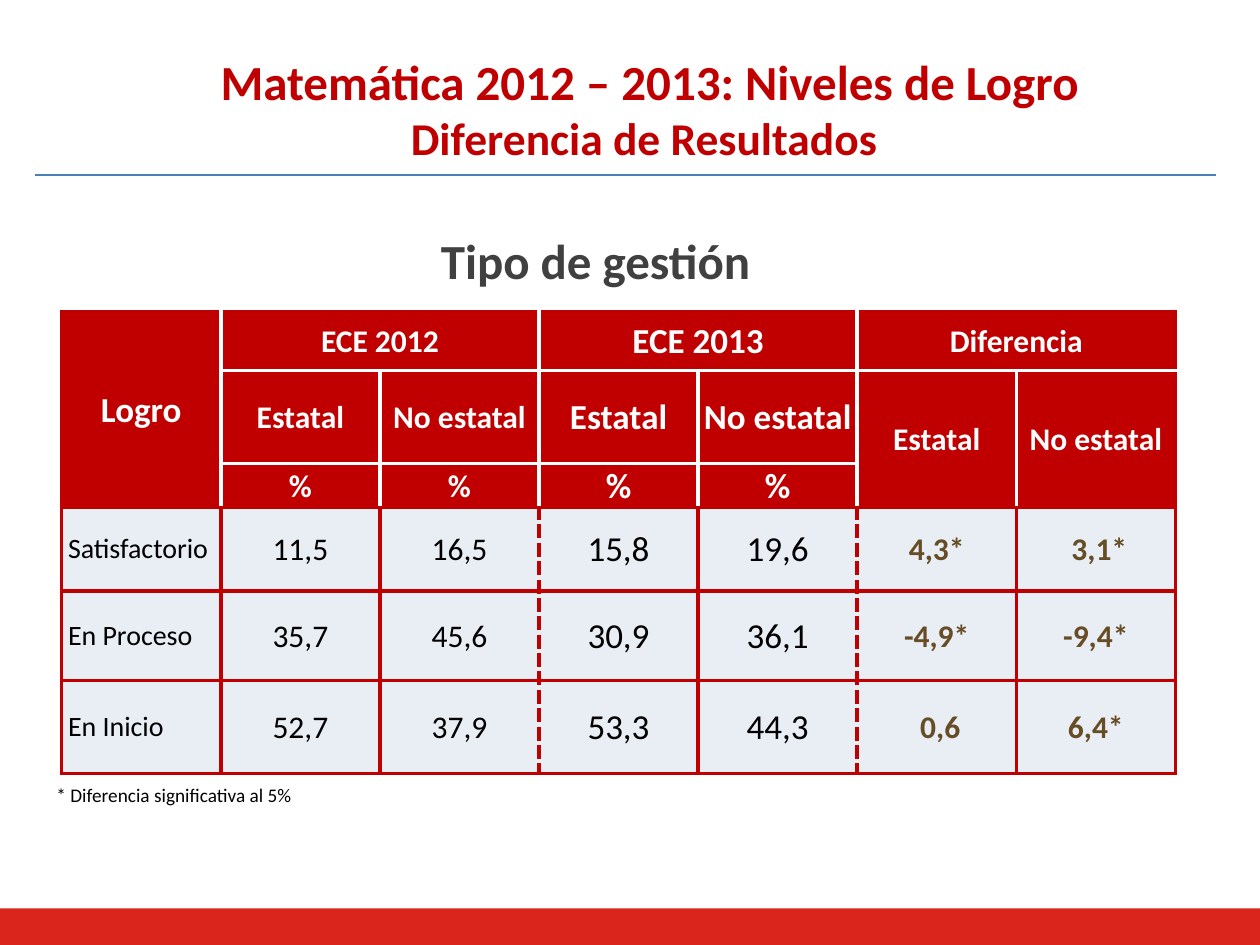
"""Build a slide with a table of 2012-2013 mathematics results by school type."""
from lxml.etree import SubElement
from pptx import Presentation
from pptx.dml.color import RGBColor
from pptx.enum.shapes import MSO_CONNECTOR, MSO_SHAPE
from pptx.enum.text import MSO_ANCHOR, PP_ALIGN
from pptx.oxml.ns import qn
from pptx.util import Inches, Pt

COLORS = {"red": "C00000", "white": "FFFFFF", "pale": "E9EDF4", "black": "000000",
          "brown": "674D26", "gray": "404040", "rule": "4B7EBC", "footer": "DA251D"}
TEXT_BOXES = [
    {"at": (0.98, 0.23, 8.35, 1.25), "wrap": True, "align": PP_ALIGN.CENTER,
     "color": "red", "bold": True,
     "lines": [("Matemática 2012 – 2013: Niveles de Logro", 28),
               ("Diferencia de Resultados ", 26)]},
    {"at": (3.4, 1.78, 2.69, 0.57), "wrap": False, "align": PP_ALIGN.LEFT,
     "color": "gray", "bold": True, "lines": [("Tipo de gestión", 28)]},
    {"at": (0.35, 5.87, 6.74, 0.88), "wrap": True, "align": PP_ALIGN.LEFT,
     "color": "black", "bold": False,
     "lines": [("* Diferencia significativa al 5%", 11)]},
]
ROWS = [
    ["Logro", "ECE 2012", "", "ECE 2013", "", "Diferencia", ""],
    ["", "Estatal", "No estatal", "Estatal", "No estatal", "Estatal", "No estatal"],
    ["", "%", "%", "%", "%", "", ""],
    ["Satisfactorio", "11,5", "16,5", "15,8", "19,6", "4,3*", " 3,1*"],
    ["En Proceso", "35,7", "45,6", "30,9", "36,1", "-4,9*", "-9,4*"],
    ["En Inicio", "52,7", "37,9", "53,3", "44,3", " 0,6", "6,4*"],
]
MERGES = [(0, 0, 2, 0), (0, 1, 0, 2), (0, 3, 0, 4), (0, 5, 0, 6),
          (1, 5, 2, 5), (1, 6, 2, 6)]
HEADER_ROWS = 3
ROW_HEIGHTS = [0.47, 0.74, 0.35, 0.66, 0.71, 0.74]
COLUMN_SIZES = [16, 18, 18, 20, 20, 18, 18]
TABLE_LEFT, TABLE_TOP, TABLE_WIDTH = 0.49, 2.47, 8.84
DASHED_EDGES = (3, 5)
FIRST_DIFFERENCE = 5


def rgb(name):
    return RGBColor.from_string(COLORS[name])


def write(paragraph, text, align, **format_values):
    paragraph.alignment = align
    run = paragraph.add_run()
    run.text = text
    run.font.color.rgb = rgb(format_values.pop("color"))
    for name, value in {"name": "Calibri", **format_values}.items():
        setattr(run.font, name, value)


def add_text_box(slide, box):
    frame = slide.shapes.add_textbox(*map(Inches, box["at"])).text_frame
    frame.word_wrap = box["wrap"]
    frame.vertical_anchor = MSO_ANCHOR.MIDDLE
    for index, (text, size) in enumerate(box["lines"]):
        paragraph = frame.add_paragraph() if index else frame.paragraphs[0]
        write(paragraph, text, box["align"], size=Pt(size), bold=box["bold"],
              color=box["color"])


def vertical_edge(row, edge):
    if row < HEADER_ROWS:
        return ("white" if 0 < edge < len(COLUMN_SIZES) else "red"), "solid"
    return "red", "sysDash" if edge in DASHED_EDGES else "solid"


def horizontal_edge(edge):
    return ("white" if 0 < edge < HEADER_ROWS else "red"), "solid"


def set_borders(cell, row, column):
    edges = {"lnL": vertical_edge(row, column),
             "lnR": vertical_edge(row, column + cell.span_width),
             "lnT": horizontal_edge(row),
             "lnB": horizontal_edge(row + cell.span_height)}
    properties = cell._tc.get_or_add_tcPr()
    for index, (tag, (color, dash)) in enumerate(edges.items()):
        line = SubElement(properties, qn(f"a:{tag}"), w=str(Pt(2.25)))
        fill = SubElement(line, qn("a:solidFill"))
        SubElement(fill, qn("a:srgbClr"), val=COLORS[color])
        SubElement(line, qn("a:prstDash"), val=dash)
        properties.insert(index, line)


def fill_cell(cell, text, row, column):
    header = row < HEADER_ROWS
    label = not header and column == 0
    difference = not header and column >= FIRST_DIFFERENCE
    cell.fill.solid()
    cell.fill.fore_color.rgb = rgb("red" if header else "pale")
    cell.vertical_anchor = MSO_ANCHOR.MIDDLE
    side, top = (0.05, 0) if label else (0.01, 0.01)
    margins = {"left": side, "right": side, "top": top, "bottom": 0}
    for name, value in margins.items():
        setattr(cell, f"margin_{name}", Inches(value))
    if cell.is_spanned:
        return
    size = 20 if header and column == 0 else COLUMN_SIZES[column]
    color = "white" if header else "brown" if difference else "black"
    write(cell.text_frame.paragraphs[0], text,
          PP_ALIGN.LEFT if label else PP_ALIGN.CENTER,
          size=Pt(size), bold=header or difference, color=color)
    set_borders(cell, row, column)


def add_results_table(slide):
    frame = slide.shapes.add_table(
        len(ROWS), len(COLUMN_SIZES), Inches(TABLE_LEFT), Inches(TABLE_TOP),
        Inches(TABLE_WIDTH), Inches(sum(ROW_HEIGHTS)))
    table = frame.table
    table.first_row = table.horz_banding = False
    for table_row, height in zip(table.rows, ROW_HEIGHTS):
        table_row.height = Inches(height)
    for top, left, bottom, right in MERGES:
        table.cell(top, left).merge(table.cell(bottom, right))
    for row, texts in enumerate(ROWS):
        for column, text in enumerate(texts):
            fill_cell(table.cell(row, column), text, row, column)


def main():
    presentation = Presentation()
    presentation.slide_width, presentation.slide_height = Inches(10), Inches(7.5)
    slide = presentation.slides.add_slide(presentation.slide_layouts[6])

    footer = slide.shapes.add_shape(
        MSO_SHAPE.RECTANGLE, *map(Inches, (0, 7.21, 10, 0.29)))
    footer.shadow.inherit = False
    footer.fill.solid()
    footer.fill.fore_color.rgb = rgb("footer")
    footer.line.fill.background()

    rule = slide.shapes.add_connector(
        MSO_CONNECTOR.STRAIGHT, *map(Inches, (0.28, 1.39, 9.65, 1.39)))
    rule.line.color.rgb = rgb("rule")
    rule.line.width = Pt(0.75)
    SubElement(rule._element.spPr, qn("a:effectLst"))

    for box in TEXT_BOXES:
        add_text_box(slide, box)
    add_results_table(slide)
    presentation.save("out.pptx")


if __name__ == "__main__":
    main()
